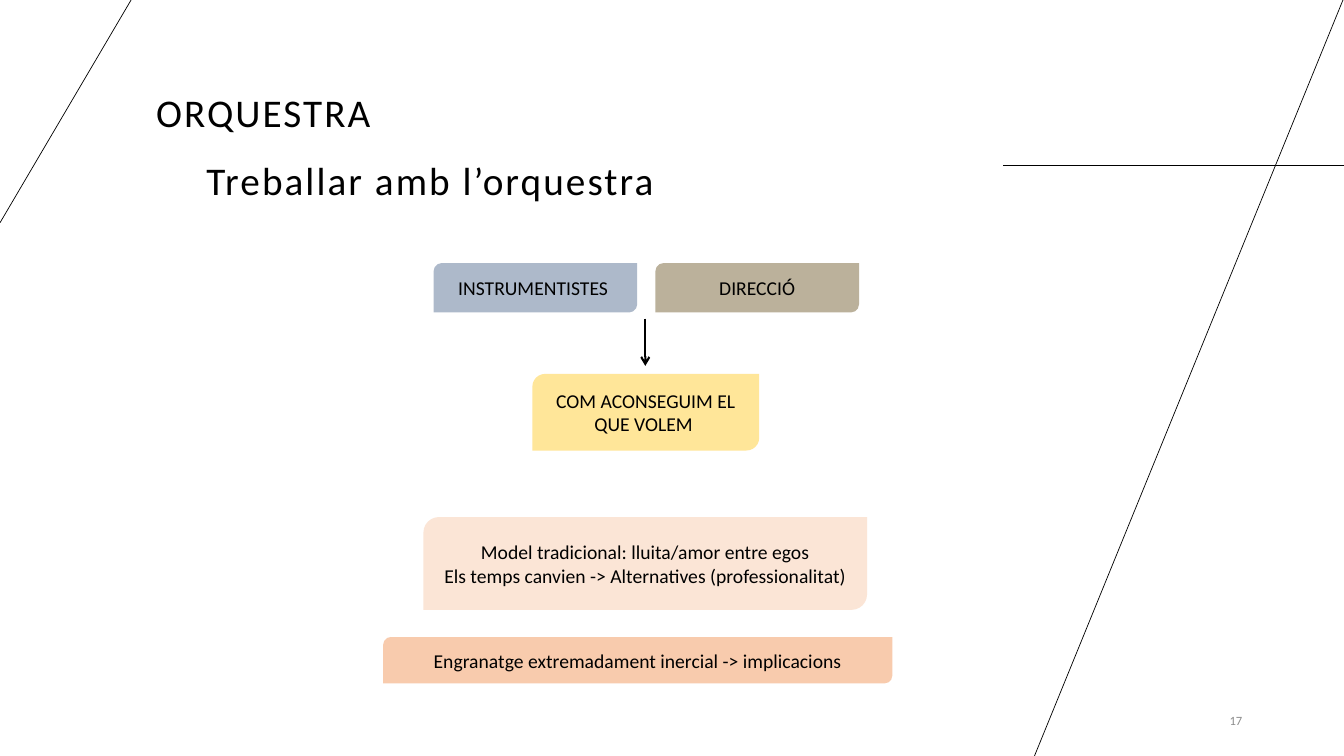
from dataclasses import dataclass

from lxml import etree
from pptx import Presentation
from pptx.dml.color import RGBColor
from pptx.enum.shapes import MSO_CONNECTOR, MSO_SHAPE
from pptx.enum.text import MSO_ANCHOR, PP_ALIGN
from pptx.oxml.ns import qn
from pptx.util import Inches, Pt

STRAIGHT = MSO_CONNECTOR.STRAIGHT
DIAG = MSO_SHAPE.ROUND_2_DIAG_RECTANGLE
MIDDLE, BOTTOM = MSO_ANCHOR.MIDDLE, MSO_ANCHOR.BOTTOM
LEFT, CENTER, RIGHT = PP_ALIGN.LEFT, PP_ALIGN.CENTER, PP_ALIGN.RIGHT


@dataclass(frozen=True)
class Theme:
    """Colours, font and type sizes of the slide."""
    font: str = "Calibri"
    ink: str = "000000"
    grey: str = "8C8C8C"
    blue: str = "ADB9CA"
    tan: str = "BBB19B"
    yellow: str = "FFE699"
    peach: str = "FBE5D6"
    orange: str = "F8CBAD"
    title: int = 28
    body: int = 14
    small: int = 9
    thin: float = 0.5
    thick: float = 1.5


class Deck:
    """Draws styled elements on the current slide."""

    def __init__(self, slide, theme):
        self.shapes = slide.shapes
        self.theme = theme

    def style(self, shape, text, size, color, align, anchor):
        """Fill a shape with one styled paragraph."""
        frame = shape.text_frame
        frame.word_wrap = True
        frame.vertical_anchor = anchor
        para = frame.paragraphs[0]
        para.text = text
        para.alignment = align
        for run in para.runs:
            run.font.name = self.theme.font
            run.font.size = Pt(size)
            run.font.color.rgb = RGBColor.from_string(color)
        return para

    def label(self, box, text, size, color, align, anchor):
        """Add a text box."""
        shape = self.shapes.add_textbox(*map(Inches, box))
        return self.style(shape, text, size, color, align, anchor)

    def title(self, left, top, text):
        """Add a wide heading with spaced letters."""
        para = self.label((left, top, 7.97, 0.53), text, self.theme.title,
                          self.theme.ink, LEFT, BOTTOM)
        para.line_spacing = 0.9
        for run in para.runs:
            run.font._element.set("spc", "150")

    def card(self, box, text, fill):
        """Add a filled card with centred text."""
        shape = self.shapes.add_shape(DIAG, *map(Inches, box))
        shape.shadow.inherit = False
        shape.fill.solid()
        shape.fill.fore_color.rgb = RGBColor.from_string(fill)
        shape.line.fill.background()
        self.style(shape, text, self.theme.body, self.theme.ink, CENTER, MIDDLE)

    def line(self, start, end, width, arrow=False):
        """Add a straight line, with an arrowhead if asked."""
        link = self.shapes.add_connector(STRAIGHT, *map(Inches, start + end))
        link.line.color.rgb = RGBColor.from_string(self.theme.ink)
        link.line.width = Pt(width)
        props = link._element.spPr
        etree.SubElement(props, qn("a:effectLst"))
        if arrow:
            etree.SubElement(props.find(qn("a:ln")), qn("a:tailEnd"), type="arrow")


def main():
    """Build the slide and save it."""
    show = Presentation()
    show.slide_width, show.slide_height = Inches(13.33), Inches(7.5)
    theme = Theme()
    deck = Deck(show.slides.add_slide(show.slide_layouts[6]), theme)

    for start, end in (
        ((9.95, 1.64), (13.33, 1.64)),
        ((13.32, 0), (10.26, 7.5)),
        ((0, 2.21), (1.3, 0)),
    ):
        deck.line(start, end, theme.thin)

    deck.label((11.34, 6.95, 1.08, 0.4), "17", theme.small, theme.grey, RIGHT, MIDDLE)
    deck.title(1.45, 0.87, "ORQUESTRA")
    deck.title(1.95, 1.54, "Treballar amb l’orquestra")

    for box, text, fill in (
        ((6.5, 2.61, 2.02, 0.49), "DIRECCIÓ", theme.tan),
        ((4.3, 2.61, 2.02, 0.49), "INSTRUMENTISTES ", theme.blue),
        ((5.28, 3.71, 2.25, 0.76), "COM ACONSEGUIM EL QUE VOLEM ", theme.yellow),
        ((4.2, 5.13, 4.4, 0.92),
         "Model tradicional: lluita/amor entre egos\n"
         "Els temps canvien -> Alternatives (professionalitat)", theme.peach),
        ((3.8, 6.32, 5.05, 0.46),
         "Engranatge extremadament inercial -> implicacions", theme.orange),
    ):
        deck.card(box, text, fill)
    deck.line((6.4, 3.16), (6.4, 3.63), theme.thick, arrow=True)

    show.save("out.pptx")


if __name__ == "__main__":
    main()
